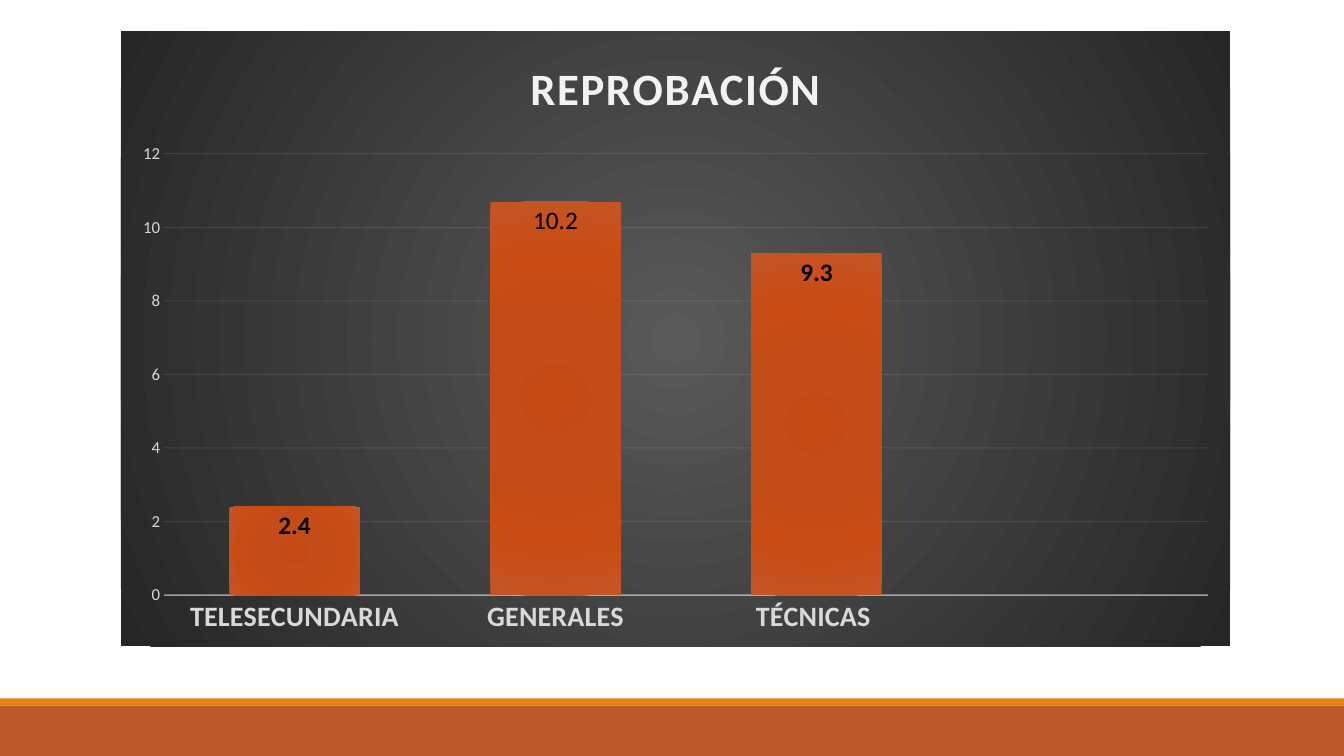
import lxml.etree
import pptx
import pptx.chart.data
import pptx.dml.color
import pptx.enum.chart
import pptx.enum.shapes
import pptx.oxml
import pptx.oxml.ns
import pptx.util

Inches = pptx.util.Inches
RGBColor = pptx.dml.color.RGBColor
qn = pptx.oxml.ns.qn

FONT = "Calibri"
RUST = RGBColor(0xBD, 0x58, 0x2C)
ORANGE = RGBColor(0xE4, 0x83, 0x12)
BLACK = RGBColor(0x00, 0x00, 0x00)
NEAR_WHITE = RGBColor(0xF2, 0xF2, 0xF2)
LIGHT_GRAY = RGBColor(0xD9, 0xD9, 0xD9)
PANEL_STOPS = [(0, RGBColor(0x59, 0x59, 0x59)), (100, RGBColor(0x26, 0x26, 0x26))]
COLUMN_STOPS = [
    (0, RGBColor(0xC4, 0x4A, 0x15)),
    (34, RGBColor(0xC3, 0x4C, 0x18)),
    (70, RGBColor(0xC9, 0x4C, 0x15)),
    (100, RGBColor(0xC4, 0x55, 0x25)),
]


def format_font(font, size, color, bold=False):
    font.name = FONT
    font.size = pptx.util.Pt(size)
    font.bold = bold
    font.color.rgb = color


def write_text(text_frame, text, *, size, color, bold=False, spacing=0):
    run = text_frame.paragraphs[0].add_run()
    run.text = text
    format_font(run.font, size, color, bold)
    if spacing:
        run.font._element.set("spc", str(spacing))


def radial_gradient(stops, center):
    """Return a circular gradient fill whose focus is at center, in percent."""
    gradient = pptx.oxml.parse_xml(f'<a:gradFill {pptx.oxml.ns.nsdecls("a")}/>')
    stop_list = lxml.etree.SubElement(gradient, qn("a:gsLst"))
    for position, color in stops:
        stop = lxml.etree.SubElement(stop_list, qn("a:gs"), pos=str(position * 1000))
        lxml.etree.SubElement(stop, qn("a:srgbClr"), val=str(color))
    circle = lxml.etree.SubElement(gradient, qn("a:path"), path="circle")
    edges = {side: str(center * 1000) for side in "ltrb"}
    lxml.etree.SubElement(circle, qn("a:fillToRect"), **edges)
    return gradient


def format_line(line, color, width, opacity):
    line.color.rgb = color
    line.width = pptx.util.Pt(width)
    color_element = line._ln.find(".//" + qn("a:srgbClr"))
    lxml.etree.SubElement(color_element, qn("a:alpha"), val=str(opacity * 1000))


def add_footer_bands(slide, left, top, width, height):
    """Thin orange stripe above a rust band."""
    stripe = Inches(0.07)
    bands = [(top, stripe, ORANGE), (top + stripe, height - stripe, RUST)]
    for band_top, band_height, color in bands:
        band = slide.shapes.add_shape(
            pptx.enum.shapes.MSO_SHAPE.RECTANGLE, left, band_top, width, band_height
        )
        band.shadow.inherit = False
        band.fill.solid()
        band.fill.fore_color.rgb = color
        band.line.fill.background()


def format_axes(chart):
    no_ticks = pptx.enum.chart.XL_TICK_MARK.NONE
    category_axis, value_axis = chart.category_axis, chart.value_axis
    for axis in (category_axis, value_axis):
        axis.major_tick_mark = no_ticks
        axis.minor_tick_mark = no_ticks
    format_font(category_axis.tick_labels.font, 20, LIGHT_GRAY, bold=True)
    format_line(category_axis.format.line, NEAR_WHITE, 1, 54)
    format_font(value_axis.tick_labels.font, 12, LIGHT_GRAY)
    value_axis.format.line.fill.background()
    value_axis.minimum_scale, value_axis.maximum_scale = 0, 12
    value_axis.major_unit = 2
    format_line(value_axis.major_gridlines.format.line, NEAR_WHITE, 0.75, 10)


def format_columns(plot):
    plot.gap_width = 100
    plot.overlap = -24
    plot.vary_by_categories = False
    series = plot.series[0]
    series.format.fill.solid()
    solid_fill = series._element.spPr.find(qn("a:solidFill"))
    solid_fill.getparent().replace(solid_fill, radial_gradient(COLUMN_STOPS, 100))

    # Value labels, with a written one on the second column
    inside_end = pptx.enum.chart.XL_LABEL_POSITION.INSIDE_END
    labels = series.data_labels
    labels.show_value = True
    labels.position = inside_end
    format_font(labels.font, 18, BLACK, bold=True)
    generales_label = series.points[1].data_label
    write_text(generales_label.text_frame, "10.2", size=18, color=BLACK)
    generales_label.position = inside_end


def add_failure_chart(slide, left, top, width, height):
    data = pptx.chart.data.CategoryChartData()
    data.categories = ["TELESECUNDARIA", "GENERALES", "TÉCNICAS ", ""]
    data.add_series("REPROBACIÓN", [2.4, 10.7, 9.3, None])
    chart = slide.shapes.add_chart(
        pptx.enum.chart.XL_CHART_TYPE.COLUMN_CLUSTERED, left, top, width, height, data
    ).chart
    chart.has_legend = False
    format_font(chart.font, 10, BLACK)

    # Dark panel behind the plot
    panel = pptx.oxml.parse_xml(f'<c:spPr {pptx.oxml.ns.nsdecls("c", "a")}/>')
    panel.append(radial_gradient(PANEL_STOPS, 50))
    outline = lxml.etree.SubElement(panel, qn("a:ln"))
    lxml.etree.SubElement(outline, qn("a:noFill"))
    chart._chartSpace.find(qn("c:chart")).addnext(panel)

    # Title
    chart.has_title = True
    chart.chart_title.include_in_layout = False
    write_text(chart.chart_title.text_frame, "REPROBACIÓN",
               size=32, color=NEAR_WHITE, bold=True, spacing=100)

    format_axes(chart)
    format_columns(chart.plots[0])


def main():
    presentation = pptx.Presentation()
    presentation.slide_width = Inches(13.33)
    presentation.slide_height = Inches(7.5)
    slide = presentation.slides.add_slide(presentation.slide_layouts[6])
    add_footer_bands(slide, 0, Inches(6.93), presentation.slide_width, Inches(0.57))
    add_failure_chart(slide, Inches(1.2), Inches(0.31), Inches(11), Inches(6.1))
    presentation.save("out.pptx")


if __name__ == "__main__":
    main()
